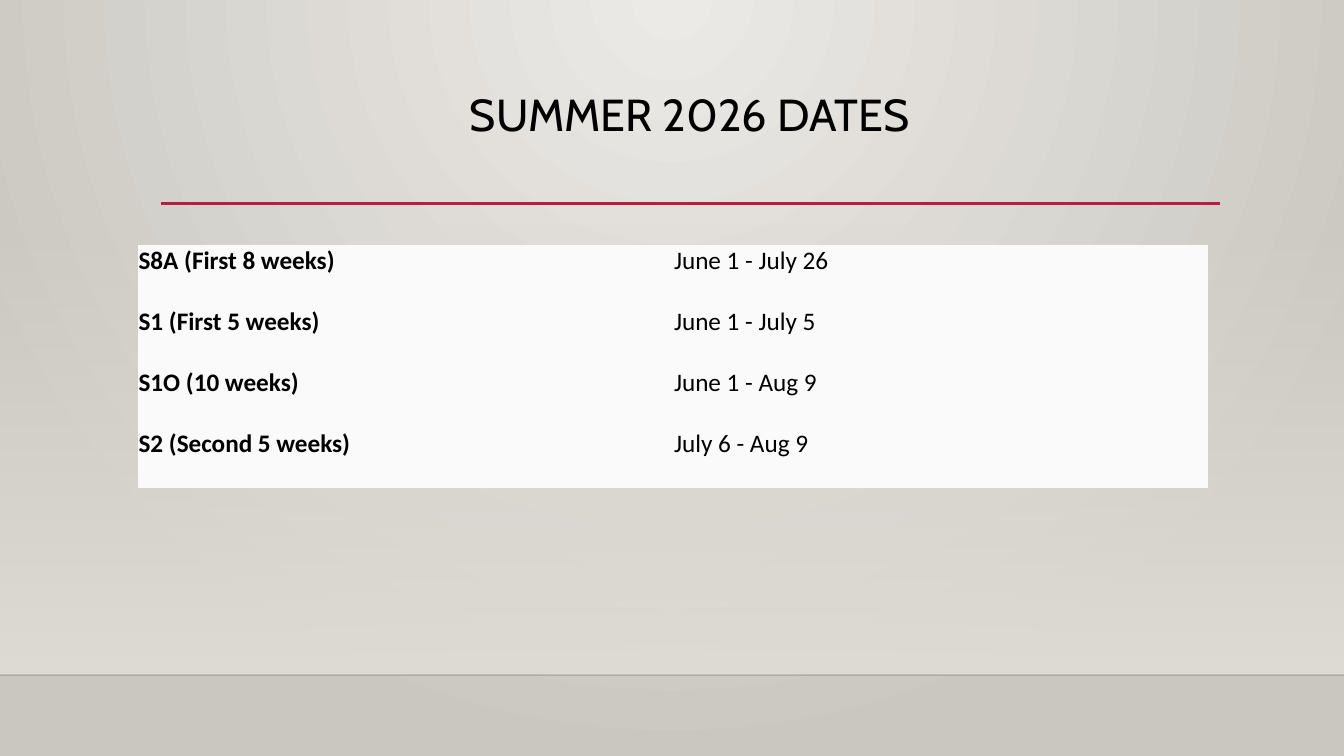
from dataclasses import dataclass

from lxml import etree
from pptx import Presentation
from pptx.dml.color import RGBColor
from pptx.enum.shapes import MSO_CONNECTOR, MSO_SHAPE
from pptx.enum.text import MSO_ANCHOR, PP_ALIGN
from pptx.oxml.ns import qn
from pptx.util import Pt

EMU_PER_PX = 9525
WIDTH, HEIGHT = 1280, 720
FLOOR_TOP = 643
TITLE_ONLY = 5
CENTER = PP_ALIGN.CENTER
TOP = MSO_ANCHOR.TOP
RECTANGLE = MSO_SHAPE.RECTANGLE
STRAIGHT = MSO_CONNECTOR.STRAIGHT
PLAIN_TABLE = "{2D5ABB26-0587-4C30-8999-92F81FD0307C}"
ROW_HEIGHT, COLUMN_WIDTH = 58, 510


@dataclass
class Session:
    name: str
    dates: str


@dataclass
class Rule:
    left: int
    right: int
    y: int
    color: str
    points: float
    opacity: int = 100


SESSIONS = [
    Session("S8A (First 8 weeks)", "June 1 - July 26"),
    Session("S1 (First 5 weeks)", "June 1 - July 5"),
    Session("S1O (10 weeks)", "June 1 - Aug 9"),
    Session("S2 (Second 5 weeks)", "July 6 - Aug 9"),
]
RULES = [
    Rule(0, WIDTH, FLOOR_TOP, "000001", 1, 20),
    Rule(153, 1162, 194, "B71E42", 2.5),
]


def px(length: int) -> int:
    return length * EMU_PER_PX


def rgb(color: str) -> RGBColor:
    return RGBColor.from_string(color)


def set_gradient(fill, start: str, end: str) -> None:
    fill.gradient()
    for stop, color in zip(fill.gradient_stops, (start, end)):
        stop.color.rgb = rgb(color)


def set_opacity(element, percent: int) -> None:
    """Make the first colour found inside the element translucent."""
    color = element.find(".//" + qn("a:srgbClr"))
    etree.SubElement(color, qn("a:alpha"), val=str(percent * 1000))


def paint_background(slide) -> None:
    """Spread a circular gradient from the middle of the top edge."""
    set_gradient(slide.background.fill, "ECEAE7", "CAC7C1")
    gradient = slide.element.find(".//" + qn("a:gradFill"))
    linear = gradient.find(qn("a:lin"))
    circle = etree.Element(qn("a:path"), path="circle")
    etree.SubElement(circle, qn("a:fillToRect"), l="43000", t="0", r="43000", b="100000")
    gradient.replace(linear, circle)


def add_wall(slide) -> None:
    top = 212
    wall = slide.shapes.add_shape(RECTANGLE, 0, px(top), px(WIDTH), px(FLOOR_TOP - top))
    wall.shadow.inherit = False
    wall.line.fill.background()
    set_gradient(wall.fill, "DFDBD5", "DFDBD5")
    wall.fill.gradient_angle = 270
    set_opacity(wall.element.spPr, 0)


def add_rule(slide, rule: Rule) -> None:
    line = slide.shapes.add_connector(
        STRAIGHT, px(rule.left), px(rule.y), px(rule.right), px(rule.y))
    line.line.color.rgb = rgb(rule.color)
    line.line.width = Pt(rule.points)
    properties = line.element.spPr
    if rule.opacity < 100:
        set_opacity(properties, rule.opacity)
    etree.SubElement(properties, qn("a:effectLst"))


def style_font(font, name: str, size: int, bold: bool = False) -> None:
    font.name = name
    font.size = Pt(size)
    font.bold = bold
    font.color.rgb = rgb("000000")


def fill_title(slide) -> None:
    title = slide.shapes.title
    title.left, title.top, title.width, title.height = px(153), px(84), px(1008), px(110)
    frame = title.text_frame
    frame.text = "SUMMER 2026 DATES"
    frame.word_wrap = True
    frame.vertical_anchor = TOP
    para = frame.paragraphs[0]
    para.alignment = CENTER
    para.line_spacing = 0.9
    style_font(para.runs[0].font, "Cabin", 32)


def fill_cell(cell, text: str, bold: bool) -> None:
    cell.fill.solid()
    cell.fill.fore_color.rgb = rgb("FAFAFA")
    cell.margin_left = cell.margin_right = cell.margin_top = cell.margin_bottom = px(1)
    cell.vertical_anchor = TOP
    para = cell.text_frame.paragraphs[0]
    para.text = text
    para.space_after = Pt(7.5)
    style_font(para.runs[0].font, "Calibri", 18, bold)


def add_sessions(slide, sessions: list[Session]) -> None:
    frame = slide.shapes.add_table(
        len(sessions), 2, px(131), px(233),
        px(2 * COLUMN_WIDTH), px(len(sessions) * ROW_HEIGHT))
    table = frame.table
    table.first_row = table.horz_banding = False
    frame.element.find(".//" + qn("a:tableStyleId")).text = PLAIN_TABLE
    for row, session in enumerate(sessions):
        fill_cell(table.cell(row, 0), session.name, True)
        fill_cell(table.cell(row, 1), session.dates, False)


def main() -> None:
    deck = Presentation()
    deck.slide_width, deck.slide_height = px(WIDTH), px(HEIGHT)
    slide = deck.slides.add_slide(deck.slide_layouts[TITLE_ONLY])
    paint_background(slide)
    add_wall(slide)
    for rule in RULES:
        add_rule(slide, rule)
    fill_title(slide)
    add_sessions(slide, SESSIONS)
    deck.save("out.pptx")


if __name__ == "__main__":
    main()
